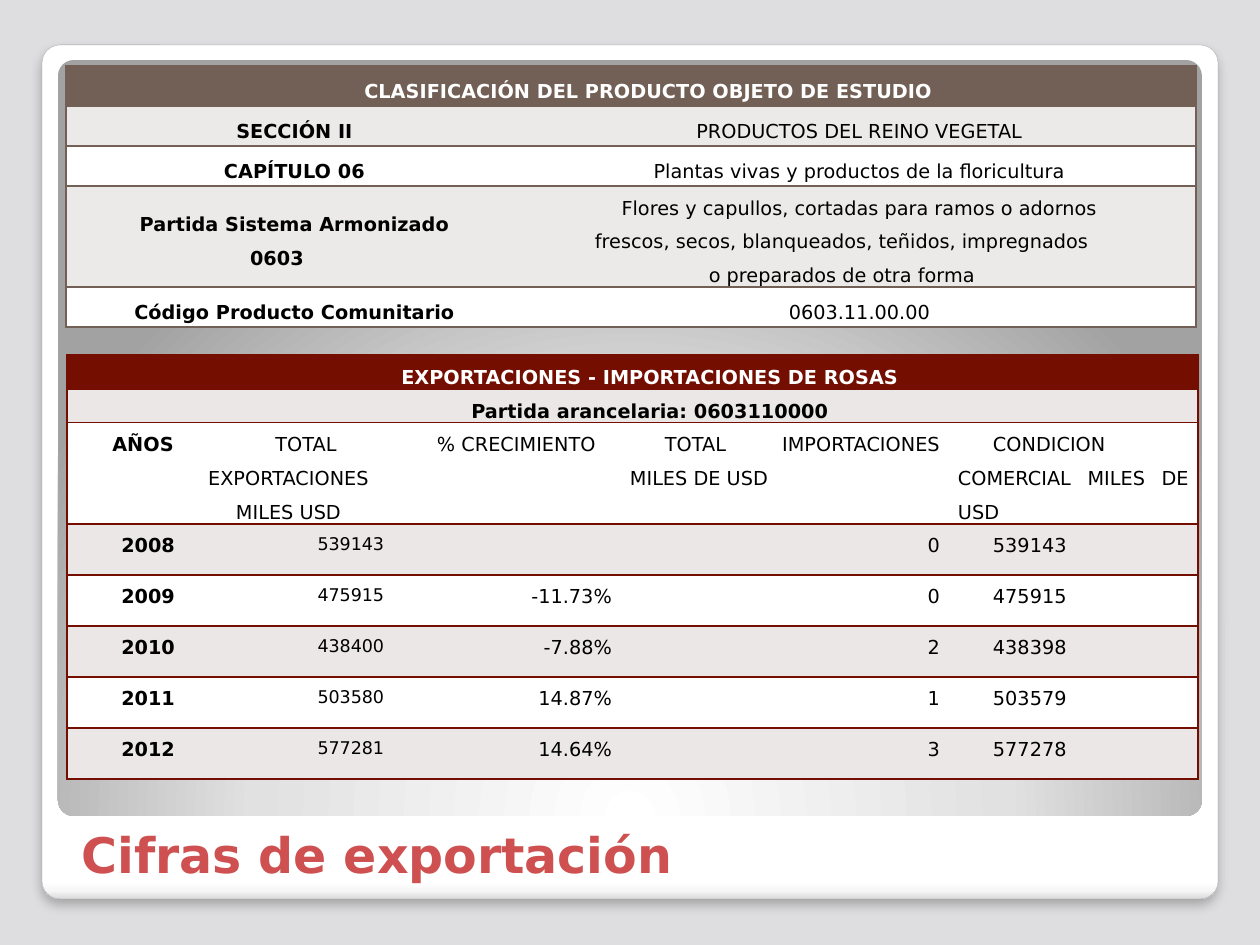
from lxml import etree
from pptx import Presentation
from pptx.dml.color import RGBColor
from pptx.enum.shapes import MSO_SHAPE
from pptx.enum.text import MSO_ANCHOR, PP_ALIGN
from pptx.oxml import parse_xml
from pptx.oxml.ns import qn
from pptx.util import Pt

ROUND_RECT = MSO_SHAPE.ROUNDED_RECTANGLE
TOP, MIDDLE, BOTTOM = MSO_ANCHOR.TOP, MSO_ANCHOR.MIDDLE, MSO_ANCHOR.BOTTOM
ALIGN = {"c": PP_ALIGN.CENTER, "r": PP_ALIGN.RIGHT, "j": PP_ALIGN.JUSTIFY}
NS = 'xmlns:a="http://schemas.openxmlformats.org/drawingml/2006/main"'
FONT = "DejaVu Sans"
BLACK, WHITE = "000000", "FFFFFF"
BROWN, BROWN_BAND = "726056", "EBEAE9"
RED, RED_BAND = "730E00", "EBE7E7"


def px(n):
    return round(n * 914400 / 126)


def rgb(color):
    return RGBColor.from_string(color)


def set_font(p, size, color, bold):
    f = p.font
    f.name, f.size, f.bold = FONT, Pt(size), bold
    f.color.rgb = rgb(color)


def add_panel(s, box, stops, direction):
    sp = s.shapes.add_shape(ROUND_RECT, *map(px, box))
    sp.adjustments[0] = 0.021
    sp.shadow.inherit = False
    sp.line.fill.background()
    sp.fill.background()
    gs = "".join(f'<a:gs pos="{pos * 1000}"><a:srgbClr val="{color}"/></a:gs>' for pos, color in stops)
    spPr = sp._element.spPr
    spPr.replace(spPr.find(qn("a:noFill")), parse_xml(
        f'<a:gradFill {NS} rotWithShape="1"><a:gsLst>{gs}</a:gsLst>{direction}</a:gradFill>'))
    return sp


def add_frame(s, box):
    x, y, w, h = box
    card = add_panel(s, box, [(0, WHITE), (98, WHITE), (99, "F7F7F7"), (100, "DADADA")],
                     '<a:lin ang="5400000" scaled="0"/>')
    card.line.color.rgb = rgb("A4A4A4")
    card.line.width = Pt(0.16)
    card._element.spPr.find(qn("a:effectLst")).append(parse_xml(
        f'<a:outerShdw {NS} blurRad="{Pt(6)}" dist="{Pt(4)}" dir="5400000" algn="tl" rotWithShape="0">'
        f'<a:srgbClr val="{BLACK}"><a:alpha val="25000"/></a:srgbClr></a:outerShdw>'))
    add_panel(s, (x + 16, y + 15, w - 32, h - 98), [(0, WHITE), (55, "E1E1E1"), (100, "A2A2A2")],
              '<a:path path="circle"><a:fillToRect l="50000" t="175000" r="50000" b="-75000"/></a:path>')


def set_borders(cell, accent, left, right):
    tcPr = cell._tc.get_or_add_tcPr()
    for i, (side, shown) in enumerate(zip("LRTB", (left, right, True, True))):
        ln = etree.Element(qn(f"a:ln{side}"), w=str(Pt(1)))
        fill = etree.SubElement(ln, qn("a:solidFill" if shown else "a:noFill"))
        if shown:
            etree.SubElement(fill, qn("a:srgbClr"), val=accent)
        tcPr.insert(i, ln)


def add_cell_text(cell, text, size, color, bold, align, anchor):
    cell.margin_left = cell.margin_right = px(9)
    cell.margin_top = cell.margin_bottom = 0
    cell.vertical_anchor = anchor
    p = cell.text_frame.paragraphs[0]
    p.text = text
    p.alignment = ALIGN[align]
    p.line_spacing = 1.5
    pPr = p._p.get_or_add_pPr()
    pPr.set("marL", "0")
    pPr.set("indent", str(px(35)))
    set_font(p, size, color, bold)


def add_grid(s, left, top, cols, heights, rows, accent, band, anchor, small_cols=()):
    n = len(cols)
    frame = s.shapes.add_table(len(rows), n, px(left), px(top), px(sum(cols)), px(sum(heights)))
    tbl = frame.table
    tbl.first_row = tbl.horz_banding = False
    for col, w in zip(tbl.columns, cols):
        col.width = px(w)
    for r, (h, (aligns, *texts)) in enumerate(zip(heights, rows)):
        tbl.rows[r].height = px(h)
        merged = len(texts) == 1
        if merged:
            tbl.cell(r, 0).merge(tbl.cell(r, n - 1))
        for c in range(n):
            cell = tbl.cell(r, c)
            cell.fill.solid()
            cell.fill.fore_color.rgb = rgb(accent if r == 0 else band if r % 2 else WHITE)
            set_borders(cell, accent, c == 0, merged or c == n - 1)
        for c, (align, text) in enumerate(zip(aligns, texts)):
            size = 10 if c in small_cols and aligns[0] == "r" else 11
            add_cell_text(tbl.cell(r, c), text, size, BLACK if r else WHITE, c == 0, align, anchor)


def add_classification(s, left, top):
    rows = [
        ("c", "CLASIFICACIÓN DEL PRODUCTO OBJETO DE ESTUDIO"),
        ("cc", "SECCIÓN II", "PRODUCTOS DEL REINO VEGETAL"),
        ("cc", "CAPÍTULO 06", "Plantas vivas y productos de la floricultura"),
        ("cc", "Partida Sistema Armonizado 0603",
         "Flores y capullos, cortadas para ramos o adornos\n"
         "frescos, secos, blanqueados, teñidos, impregnados\no preparados de otra forma"),
        ("cc", "Código Producto Comunitario", "0603.11.00.00"),
    ]
    add_grid(s, left, top, [422, 708], [40, 40, 40, 101, 40], rows, BROWN, BROWN_BAND, MIDDLE)


def add_trade(s, left, top):
    years = [
        ("2008", "539143", "", "0", "539143"),
        ("2009", "475915", "-11.73%", "0", "475915"),
        ("2010", "438400", "-7.88%", "2", "438398"),
        ("2011", "503580", "14.87%", "1", "503579"),
        ("2012", "577281", "14.64%", "3", "577278"),
    ]
    rows = [
        ("c", "EXPORTACIONES - IMPORTACIONES DE ROSAS"),
        ("c", "Partida arancelaria: 0603110000"),
        ("ccjjj", "AÑOS", "TOTAL\nEXPORTACIONES MILES USD", "% CRECIMIENTO",
         "TOTAL IMPORTACIONES\nMILES DE USD", "CONDICION COMERCIAL MILES DE USD"),
        *(("rrrrj", *year) for year in years),
    ]
    heights = [34, 33, 101] + [51] * len(years)
    add_grid(s, left, top, [117, 209, 228, 328, 249], heights, rows, RED, RED_BAND, TOP, small_cols=(1,))


def add_title(s, box):
    tf = s.shapes.add_textbox(*map(px, box)).text_frame
    tf.word_wrap = True
    tf.vertical_anchor = BOTTOM
    p = tf.paragraphs[0]
    p.text = "Cifras de exportación"
    set_font(p, 28, "CE5050", True)


def main():
    prs = Presentation()
    prs.slide_width, prs.slide_height = px(1260), px(945)
    s = prs.slides.add_slide(prs.slide_layouts[6])
    s.background.fill.solid()
    s.background.fill.fore_color.rgb = rgb("DEDEE0")
    add_frame(s, (42, 45, 1176, 854))
    add_classification(s, 66, 66)
    add_trade(s, 67, 355)
    add_title(s, (69, 790, 1128, 100))
    prs.save("out.pptx")


if __name__ == "__main__":
    main()
